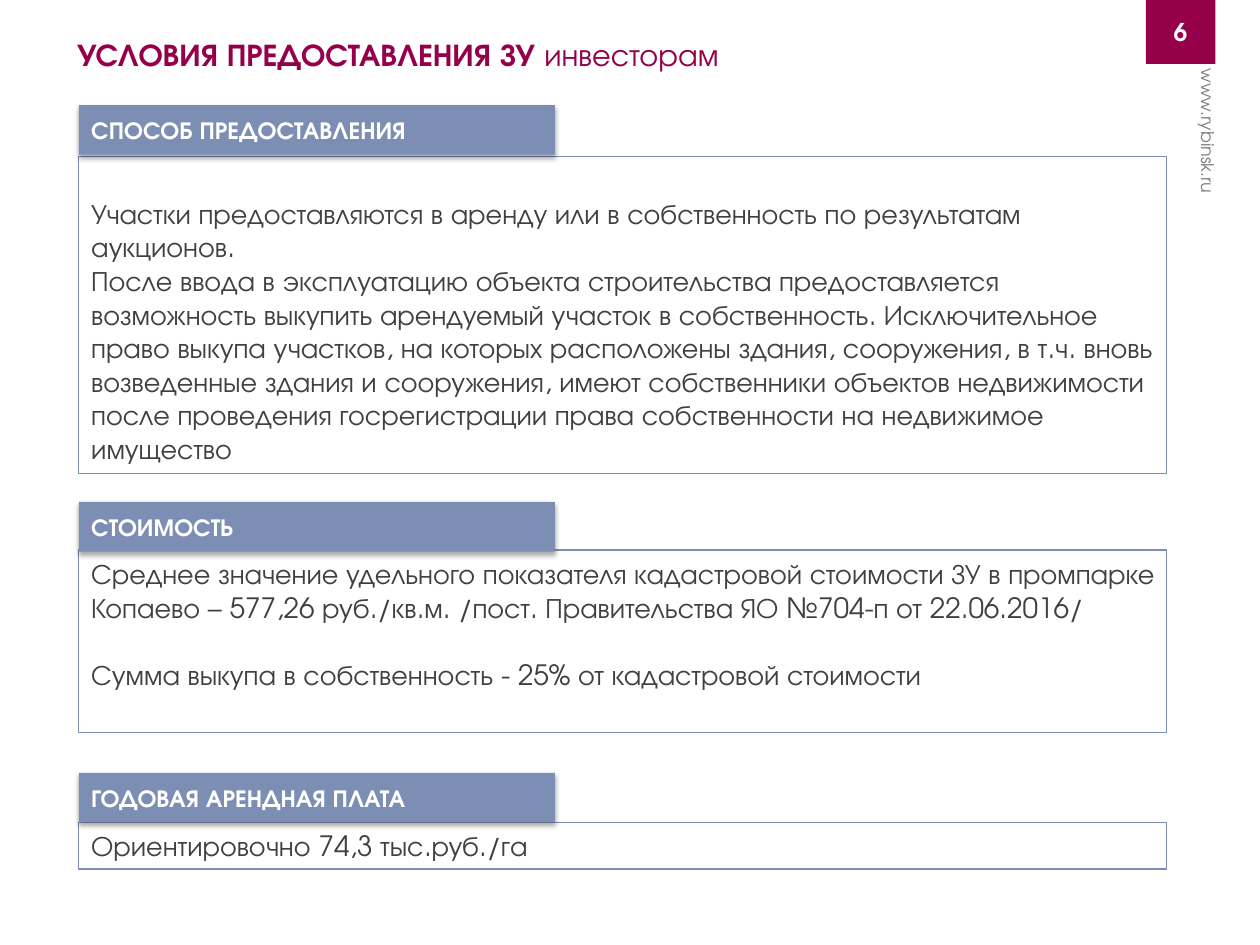
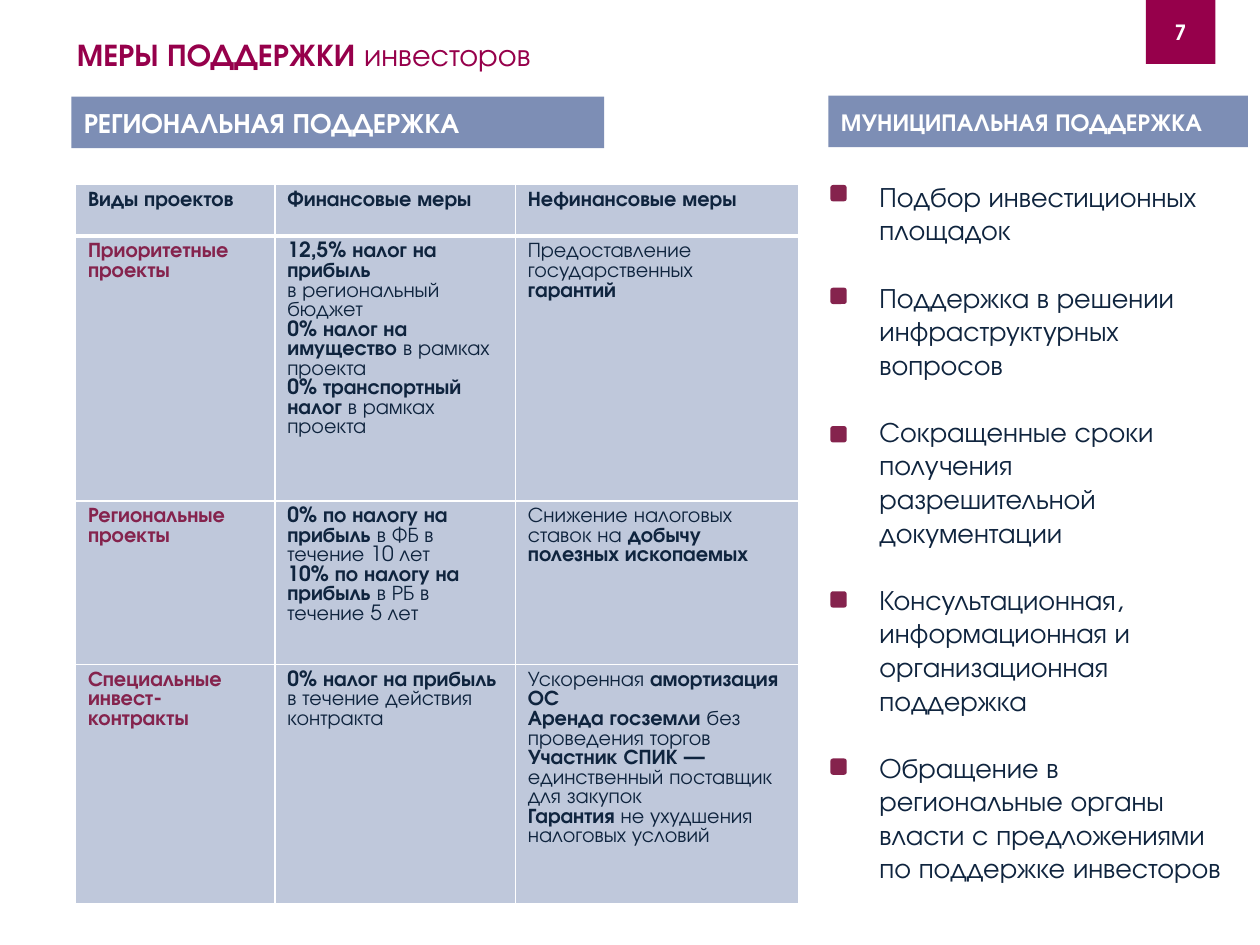
import pptx
import pptx.dml.color
import pptx.enum.shapes
import pptx.enum.text
import pptx.oxml
import pptx.util
from pptx.util import Cm, Pt

FONT = "TeX Gyre Adventor"
CRIMSON, PLUM, STEEL, PALE = "96004B", "85234D", "7D8EB5", "BFC8DB"
NAVY, GRAPHITE, GREY, WHITE = "0F243E", "404040", "808080", "FFFFFF"
BLANK_LINE = 19.2  # points, one line of 16 pt text
NBSP = chr(160)  # keeps a preposition with its noun
NS = 'xmlns:a="http://schemas.openxmlformats.org/drawingml/2006/main"'
SHAPES = pptx.enum.shapes.MSO_SHAPE
MIDDLE = pptx.enum.text.MSO_ANCHOR.MIDDLE
TOP = pptx.enum.text.MSO_ANCHOR.TOP
CENTER = pptx.enum.text.PP_ALIGN.CENTER
LEFT = pptx.enum.text.PP_ALIGN.LEFT

# Asterisks enclose bold words. Lengths are in centimetres.
TERMS_TITLE = "*УСЛОВИЯ ПРЕДОСТАВЛЕНИЯ ЗУ* инвесторам"
SITE = "www.rybinsk.ru"
TERMS = [
    # heading, heading top, body top, body height, inset above text, paragraph gap, paragraphs
    ("СПОСОБ ПРЕДОСТАВЛЕНИЯ", 2.12, 3.15, 6.4, 0.81, 0, [
        "Участки предоставляются в аренду или в собственность по результатам аукционов.",
        "После ввода в эксплуатацию объекта строительства предоставляется возможность "
        "выкупить арендуемый участок в собственность. Исключительное право выкупа "
        "участков, на которых расположены здания, сооружения, в т.ч. вновь возведенные "
        "здания и сооружения, имеют собственники объектов недвижимости после проведения "
        "госрегистрации права собственности на недвижимое имущество"]),
    ("СТОИМОСТЬ", 10.12, 11.09, 3.68, 0.13, BLANK_LINE, [
        "Среднее значение удельного показателя кадастровой стоимости ЗУ в промпарке "
        "Копаево – 577,26 руб./кв.м. /пост. Правительства ЯО №704-п от 22.06.2016/",
        "Сумма выкупа в собственность - 25% от кадастровой стоимости"]),
    ("ГОДОВАЯ АРЕНДНАЯ ПЛАТА", 15.58, 16.58, 0.94, 0.13, 0, [
        "Ориентировочно 74,3 тыс.руб./га"]),
]

SUPPORT_TITLE = "*МЕРЫ ПОДДЕРЖКИ* инвесторов"
REGIONAL = "РЕГИОНАЛЬНАЯ ПОДДЕРЖКА"
MEASURES = [
    [["*Виды проектов*"], ["*Финансовые меры*"], ["*Нефинансовые меры*"]],
    [["*Приоритетные проекты*"],
     [f"*12,5% налог на прибыль* в{NBSP}региональный бюджет",
      f"*0% налог на имущество* в{NBSP}рамках проекта",
      f"*0% транспортный налог* в{NBSP}рамках проекта"],
     ["Предоставление государственных *гарантий*"]],
    [["*Региональные проекты*"],
     ["*0% по налогу на прибыль* в ФБ в течение 10 лет",
      "*10% по налогу на прибыль* в РБ в течение 5 лет"],
     ["Снижение налоговых ставок на *добычу полезных ископаемых*"]],
    [["*Специальные инвест-контракты*"],
     ["*0% налог на прибыль* в течение действия контракта"],
     ["Ускоренная *амортизация ОС*",
      "*Аренда госземли* без проведения торгов",
      "*Участник СПИК —* единственный поставщик для закупок",
      "*Гарантия* не ухудшения налоговых условий"]],
]
COLUMN_WIDTHS = [4.02, 4.85, 5.72]
ROW_HEIGHTS = [1.04, 5.33, 3.3, 4.82]

MUNICIPAL = "МУНИЦИПАЛЬНАЯ ПОДДЕРЖКА"
SERVICES = [  # marker top, service
    (3.73, "Подбор инвестиционных площадок"),
    (5.8, "Поддержка в решении инфраструктурных вопросов"),
    (8.59, "Сокращенные сроки получения разрешительной документации"),
    (11.92, "Консультационная, информационная и организационная поддержка"),
    (15.29, "Обращение в региональные органы власти с предложениями по поддержке инвесторов"),
]


def rgb(hex_color):
    return pptx.dml.color.RGBColor.from_string(hex_color)


def write(frame, paragraphs, size, color, gap=0, align=None):
    """Fill a text frame, turning asterisked words bold."""
    for index, text in enumerate(paragraphs):
        paragraph = frame.add_paragraph() if index else frame.paragraphs[0]
        if index and gap:
            paragraph.space_before = Pt(gap)
        paragraph.alignment = align
        parts = [(part, i % 2 == 1) for i, part in enumerate(text.split("*")) if part]
        font = paragraph.font
        font.name, font.size = FONT, Pt(size)
        font.color.rgb = rgb(color)
        if len(parts) == 1:
            font.bold = parts[0][1]
        for part, bold in parts:
            run = paragraph.add_run()
            run.text = part
            if len(parts) > 1:
                run.font.bold = bold


def add_text(slide, box, paragraphs, size, color, wrap=True, gap=0):
    textbox = slide.shapes.add_textbox(*map(Cm, box))
    textbox.text_frame.word_wrap = wrap
    write(textbox.text_frame, paragraphs, size, color, gap)
    return textbox


def add_block(slide, box, fill=None, line=None, kind=SHAPES.RECTANGLE):
    block = slide.shapes.add_shape(kind, *map(Cm, box))
    block.shadow.inherit = False
    if fill:
        block.fill.solid()
        block.fill.fore_color.rgb = rgb(fill)
    else:
        block.fill.background()
    if line:
        block.line.color.rgb = rgb(line)
        block.line.width = Pt(0.75)
    else:
        block.line.fill.background()
    return block


def add_band(slide, box, label, size=14, fill=STEEL, align=LEFT):
    band = add_block(slide, box, fill)
    band.text_frame.vertical_anchor = MIDDLE
    band.text_frame.word_wrap = True
    write(band.text_frame, [f"*{label}*"], size, WHITE, align=align)
    return band


def cast_shadow(block):
    effects = block._element.spPr.find(pptx.oxml.ns.qn("a:effectLst"))
    effects.append(pptx.oxml.parse_xml(
        f'<a:outerShdw {NS} blurRad="{Pt(3.1)}" dist="{Pt(1.8)}" dir="5400000" '
        'rotWithShape="0"><a:srgbClr val="000000"><a:alpha val="35000"/></a:srgbClr>'
        '</a:outerShdw>'))


def set_borders(cell, widths):
    for side, width in widths.items():
        cell._tc.get_or_add_tcPr().append(pptx.oxml.parse_xml(
            f'<a:ln{side} {NS} w="{Pt(width)}"><a:solidFill><a:srgbClr val="{WHITE}"/>'
            f'</a:solidFill></a:ln{side}>'))


def start_slide(deck, title, title_width, number, number_size):
    slide = deck.slides.add_slide(deck.slide_layouts[6])
    add_text(slide, (1.3, 0.58, title_width, 1.02), [title], 18, CRIMSON)
    add_band(slide, (23.1, 0, 1.4, 1.29), number, number_size, CRIMSON, CENTER)
    return slide


def build_terms(deck):
    slide = start_slide(deck, TERMS_TITLE, 14.73, "6", 14)
    for heading, heading_top, body_top, body_height, inset, gap, paragraphs in TERMS:
        body = add_block(slide, (1.59, body_top, 21.93, body_height), line=STEEL)
        body.text_frame.word_wrap = True
        body.text_frame.vertical_anchor = TOP
        body.text_frame.margin_top = Cm(inset)
        body.text_frame.margin_right = Cm(0.2)
        write(body.text_frame, paragraphs, 16, GRAPHITE, gap, LEFT)
        cast_shadow(add_band(slide, (1.59, heading_top, 9.6, 1), heading))
    site = add_text(slide, (22.81, 2.33, 3.07, 0.69), [SITE], 10, GREY, wrap=False)
    site.rotation = 90


def add_measures(slide):
    table = slide.shapes.add_table(
        len(ROW_HEIGHTS), len(COLUMN_WIDTHS), Cm(1.52), Cm(3.72),
        Cm(sum(COLUMN_WIDTHS)), Cm(sum(ROW_HEIGHTS))).table
    for column, width in zip(table.columns, COLUMN_WIDTHS):
        column.width = Cm(width)
    for r, (row, height) in enumerate(zip(MEASURES, ROW_HEIGHTS)):
        table.rows[r].height = Cm(height)
        for c, paragraphs in enumerate(row):
            cell = table.cell(r, c)
            set_borders(cell, {"L": 1, "R": 1, "T": 3 if r == 1 else 1,
                               "B": 3 if r == 0 else 1})
            cell.fill.solid()
            cell.fill.fore_color.rgb = rgb(PALE)
            write(cell.text_frame, paragraphs, 12, PLUM if r and c == 0 else NAVY)


def build_support(deck):
    slide = start_slide(deck, SUPPORT_TITLE, 10.52, "7", 12)
    add_measures(slide)
    add_band(slide, (1.44, 1.95, 10.74, 1.04), REGIONAL, 16)
    add_band(slide, (16.7, 1.93, 8.46, 1.04), MUNICIPAL)
    add_text(slide, (17.48, 3.49, 7.6, 14.48), [service for _, service in SERVICES],
             16, NAVY, gap=BLANK_LINE)
    for marker_top, _ in SERVICES:
        add_block(slide, (16.74, marker_top, 0.33, 0.33), PLUM,
                  kind=SHAPES.ROUNDED_RECTANGLE)


def main():
    deck = pptx.Presentation()
    deck.slide_width, deck.slide_height = Cm(25.4), Cm(19.05)
    build_terms(deck)
    build_support(deck)
    deck.save("out.pptx")


if __name__ == "__main__":
    main()
